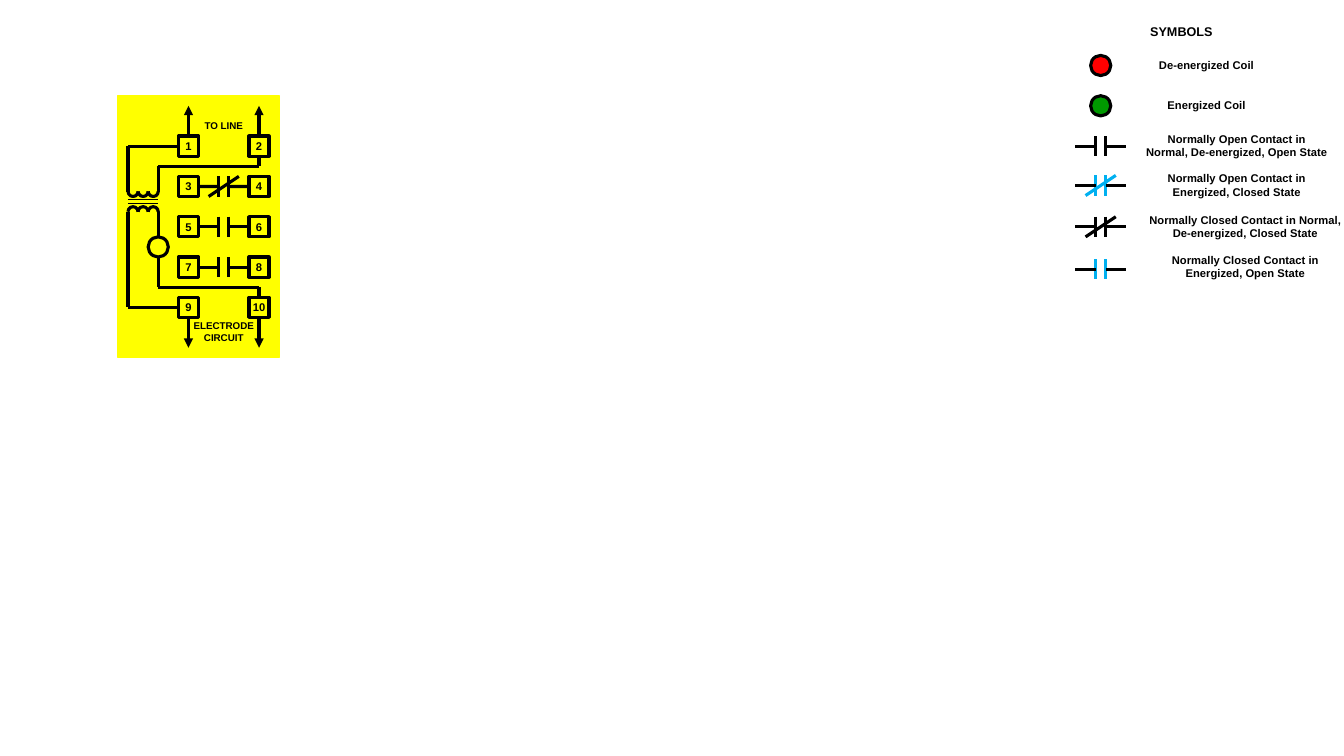
import pptx
import pptx.dml.color
import pptx.enum.shapes
import pptx.enum.text
import pptx.oxml
import pptx.oxml.ns
import pptx.util

Pt = pptx.util.Pt
SHAPE = pptx.enum.shapes.MSO_SHAPE
BLACK = pptx.dml.color.RGBColor(0x00, 0x00, 0x00)
WHITE = pptx.dml.color.RGBColor(0xFF, 0xFF, 0xFF)
YELLOW = pptx.dml.color.RGBColor(0xFF, 0xFF, 0x00)
RED = pptx.dml.color.RGBColor(0xFF, 0x00, 0x00)
GREEN = pptx.dml.color.RGBColor(0x00, 0x99, 0x00)
BLUE = pptx.dml.color.RGBColor(0x00, 0xB0, 0xF0)

U = 7.2  # grid step of the diagram
LEFT, TOP = 84.24, 68.4  # corner of the relay panel
SYMBOL_X, LABEL_X = 786.24, 818.64

prs = pptx.Presentation()
prs.slide_width, prs.slide_height = Pt(960), Pt(540)
s = prs.slides.add_slide(prs.slide_layouts[6])


def add_block(text, x, y, w, h, *, kind=SHAPE.RECTANGLE, fill=None, line=None, weight=2.25, size=8):
    """Add a shape with bold centred text; kind None gives a text box."""
    box = (Pt(x), Pt(y), Pt(w), Pt(h))
    if kind is None:
        sp = s.shapes.add_textbox(*box)
    else:
        sp = s.shapes.add_shape(kind, *box)
        sp.shadow.inherit = False
        if fill is None:
            sp.fill.background()
        else:
            sp.fill.solid()
            sp.fill.fore_color.rgb = fill
        if line is None:
            sp.line.fill.background()
        else:
            sp.line.color.rgb = line
            sp.line.width = Pt(weight)
    if text:
        tf = sp.text_frame
        tf.word_wrap = True
        tf.vertical_anchor = pptx.enum.text.MSO_ANCHOR.MIDDLE
        tf.margin_left = tf.margin_right = tf.margin_top = tf.margin_bottom = 0
        tf.text = text
        for p in tf.paragraphs:
            p.alignment = pptx.enum.text.PP_ALIGN.CENTER
            p.font.name, p.font.size, p.font.bold = "Arial", Pt(size), True
            p.font.color.rgb = BLACK
    return sp


def add_wire(x1, y1, x2, y2, *, color=BLACK, weight=2.25, arrow=False, start=None, end=None):
    """Add a line; start and end are (shape, side) pairs to join."""
    c = s.shapes.add_connector(pptx.enum.shapes.MSO_CONNECTOR.STRAIGHT, Pt(x1), Pt(y1), Pt(x2), Pt(y2))
    c.line.color.rgb = color
    c.line.width = Pt(weight)
    if arrow:
        tail = pptx.oxml.parse_xml(f'<a:tailEnd {pptx.oxml.ns.nsdecls("a")} type="triangle"/>')
        c.line._get_or_add_ln().append(tail)
    c._element.spPr.append(pptx.oxml.parse_xml(f'<a:effectLst {pptx.oxml.ns.nsdecls("a")}/>'))
    if start:
        c.begin_connect(*start)
    if end:
        c.end_connect(*end)


# Relay panel and its captions
add_block("", LEFT, TOP, 16 * U, 26 * U, fill=YELLOW, line=YELLOW, weight=1)
for caption, row in (("ELECTRODE\nCIRCUIT", 22.4), ("TO LINE", 2)):
    add_block(caption, LEFT + 7 * U, TOP + row * U, 7 * U, 2 * U, fill=YELLOW, size=7)

# Numbered terminals, odd on the left and even on the right
terminals = {}
for n in range(1, 11):
    row, side = divmod(n - 1, 2)
    terminals[n] = add_block(str(n), LEFT + (6 + 7 * side) * U, TOP + (4 + 4 * row) * U,
                             2 * U, 2 * U, fill=YELLOW, line=BLACK)

# Contacts: centre, colour, closed or not, left and right terminal
contacts = [
    (LEFT + 10.5 * U, TOP + 9 * U, BLACK, True, 3, 4),
    (LEFT + 10.5 * U, TOP + 13 * U, BLACK, False, 5, 6),
    (LEFT + 10.5 * U, TOP + 17 * U, BLACK, False, 7, 8),
    (SYMBOL_X, 104.4, BLACK, False, None, None),
    (SYMBOL_X, 132.48, BLUE, True, None, None),
    (SYMBOL_X, 162, BLACK, True, None, None),
    (SYMBOL_X, 192.24, BLUE, False, None, None),
]
for x, y, color, closed, left, right in contacts:
    for sign, number, side in ((-1, left, 3), (1, right, 1)):
        plate = x + sign * U / 2
        add_wire(plate, y - U, plate, y + U, color=color)
        add_wire(x + sign * 2.5 * U, y, plate, y, start=(terminals[number], side) if number else None)
    if closed:
        add_wire(x - 1.5 * U, y + U, x + 1.5 * U, y - U, color=color)

# Transformer: three turns per winding and a two-line core
for row, rotation in ((9, 90), (11, 270)):
    for turn in range(3):
        arc = add_block("", LEFT + (1 + turn) * U, TOP + row * U, U, U, kind=SHAPE.ARC, line=BLACK)
        arc.adjustments[0], arc.adjustments[1] = 162, 55.12
        arc.rotation = rotation
for row in (10.3, 10.7):
    add_wire(LEFT + U, TOP + row * U, LEFT + 4 * U, TOP + row * U, weight=0.5)

# Coil
add_block("", LEFT + 3 * U, TOP + 14 * U, 2 * U, 2 * U, kind=SHAPE.OVAL, fill=YELLOW, line=BLACK)

# Wiring in grid steps, with the terminal side each wire ends at
wires = [
    (1, 9.5, 1, 5, None),
    (1, 5, 6, 5, (1, 1)),
    (4, 9.5, 4, 7, None),
    (4, 7, 14, 7, None),
    (14, 7, 14, 6, (2, 2)),
    (4, 11.5, 4, 14, None),
    (4, 16, 4, 19, None),
    (4, 19, 14, 19, None),
    (14, 19, 14, 20, (10, 0)),
    (1, 11.5, 1, 21, None),
    (1, 21, 6, 21, (9, 1)),
]
for x1, y1, x2, y2, joint in wires:
    add_wire(LEFT + x1 * U, TOP + y1 * U, LEFT + x2 * U, TOP + y2 * U,
             end=(terminals[joint[0]], joint[1]) if joint else None)

# Arrows out to the line and the electrode circuit
for n, col, y1, y2, side in ((1, 7, 4, 1, 0), (2, 14, 4, 1, 0), (9, 7, 22, 25, 2), (10, 14, 22, 25, 2)):
    x = LEFT + col * U
    add_wire(x, TOP + y1 * U, x, TOP + y2 * U, arrow=True, start=(terminals[n], side))

# Legend
add_block("SYMBOLS", LABEL_X, 15.12, 7 * U, 2 * U, fill=WHITE, size=9)
for y, color in ((46.8, RED), (75.6, GREEN)):
    add_block("", SYMBOL_X - U, y - U, 2 * U, 2 * U, kind=SHAPE.OVAL, fill=color, line=BLACK)
labels = [
    ("De-energized Coil", 33.84, 86.4),
    ("Energized Coil", 62.64, 86.4),
    ("Normally Open Contact in Normal, De-energized, Open State", 91.44, 129.6),
    ("Normally Open Contact in Energized, Closed State", 119.52, 129.6),
    ("Normally Closed Contact in Normal, De-energized, Closed State", 149.04, 141.84),
    ("Normally Closed Contact in Energized, Open State", 177.84, 141.84),
]
for label, y, width in labels:
    add_block(label, LABEL_X, y, width, 25.2, kind=None)

prs.save("out.pptx")
